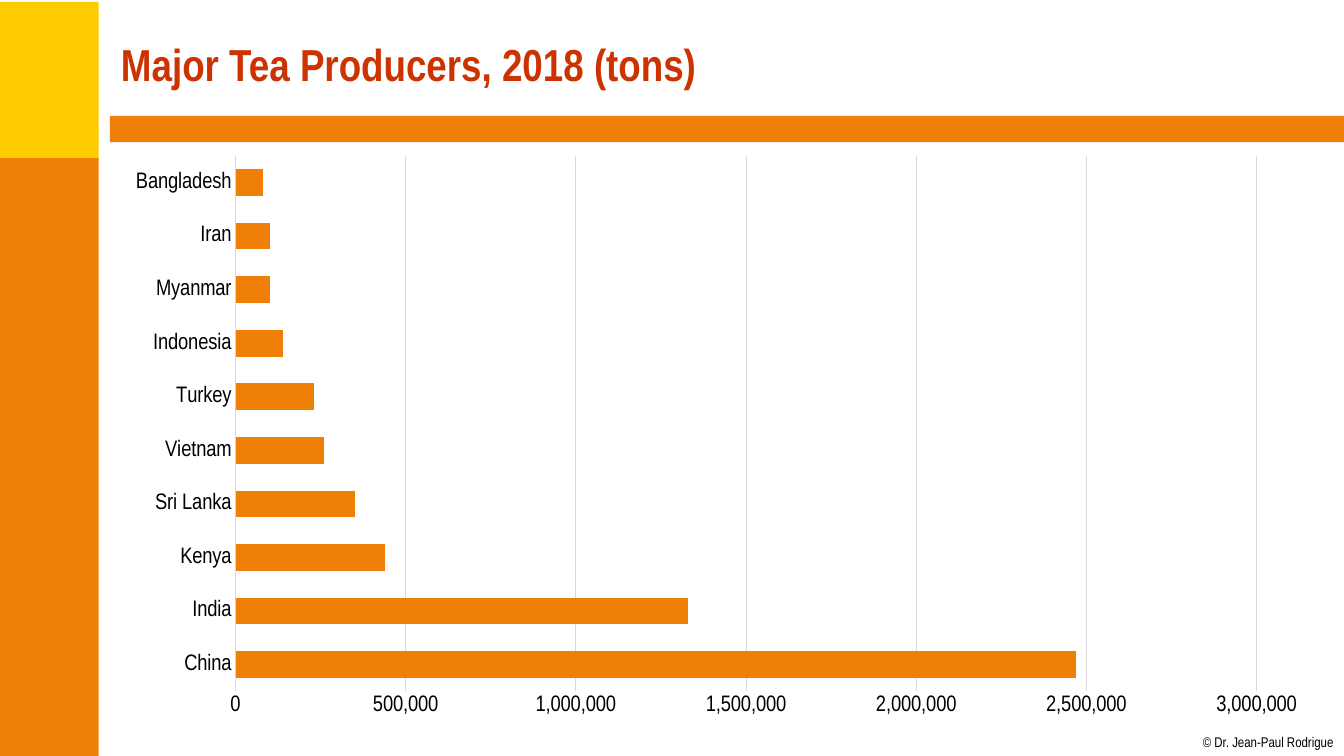
import pptx
import pptx.chart.data
import pptx.dml.color
import pptx.enum.chart
import pptx.enum.shapes
import pptx.enum.text
import pptx.oxml
import pptx.oxml.ns
import pptx.util

RGB = pptx.dml.color.RGBColor
GOLD = RGB(0xFF, 0xCC, 0x00)
ORANGE = RGB(0xF0, 0x7F, 0x09)
RED = RGB(0xCC, 0x33, 0x00)
BLACK = RGB(0, 0, 0)
GRAY = RGB(0xD9, 0xD9, 0xD9)
FACE = "Arial Narrow"
WIDE, HIGH = 13.33, 7.5
LEFT, SPAN = 1.1, 12

TEA = {
    "China": 2470000,
    "India": 1330000,
    "Kenya": 440000,
    "Sri Lanka": 350000,
    "Vietnam": 260000,
    "Turkey": 230000,
    "Indonesia": 140000,
    "Myanmar": 100000,
    "Iran": 100000,
    "Bangladesh": 80000,
}


def inches(box):
    """Turn a box of inches into lengths."""
    return [pptx.util.Inches(side) for side in box]


def style(font, size, color, bold=False):
    """Set face, size, colour and weight of a font."""
    font.name, font.size, font.bold = FACE, pptx.util.Pt(size), bold
    font.color.rgb = color


def block(slide, box, color):
    """Draw one plain colour block."""
    rect = slide.shapes.add_shape(
        pptx.enum.shapes.MSO_SHAPE.RECTANGLE, *inches(box))
    rect.shadow.inherit = False
    rect.fill.solid()
    rect.fill.fore_color.rgb = color
    rect.line.fill.background()


def frame(slide, box):
    """Draw the side band and the rule under the title."""
    left, top, wide, high = box
    band, split, rule = 1, 1.57, 1.09
    block(slide, (left - 0.02, top + 0.02, band, split), GOLD)
    block(slide, (left - 0.02, top + split, band, high - split), ORANGE)
    block(slide, (left + rule, top + 1.15, wide - rule, 0.26), ORANGE)


def credit(slide, box):
    """Write the copyright line."""
    text = slide.shapes.add_textbox(*inches(box)).text_frame
    text.margin_left = text.margin_right = 0
    text.margin_top = text.margin_bottom = 0
    text.word_wrap = False
    line = text.paragraphs[0]
    line.text = "© Dr. Jean-Paul Rodrigue"
    style(line.font, 10, BLACK)


def head(slide, box):
    """Place and fill the title."""
    title = slide.shapes.title
    title.left, title.top, title.width, title.height = inches(box)
    text = title.text_frame
    text.vertical_anchor = pptx.enum.text.MSO_ANCHOR.MIDDLE
    line = text.paragraphs[0]
    line.text = "Major Tea Producers, 2018 (tons)"
    line.alignment = pptx.enum.text.PP_ALIGN.LEFT
    style(line.font, 32, RED, True)


def layout(chart, **shares):
    """Fix the inner plot area as shares of the chart."""
    area = chart.plots[0]._element.getparent()
    for old in area.findall(pptx.oxml.ns.qn("c:layout")):
        area.remove(old)
    parts = "".join(f'<c:{key} val="{val}"/>' for key, val in shares.items())
    area.insert(0, pptx.oxml.parse_xml(
        f'<c:layout {pptx.oxml.ns.nsdecls("c")}><c:manualLayout>'
        '<c:layoutTarget val="inner"/><c:xMode val="edge"/>'
        f'<c:yMode val="edge"/>{parts}</c:manualLayout></c:layout>'))


def bars(slide, box):
    """Chart the tea output of each country."""
    data = pptx.chart.data.CategoryChartData(number_format="#,##0")
    data.categories = list(TEA)
    data.add_series("Series 1", list(TEA.values()))
    chart = slide.shapes.add_chart(
        pptx.enum.chart.XL_CHART_TYPE.BAR_CLUSTERED, *inches(box), data).chart
    chart.has_title = chart.has_legend = False
    style(chart.font, 16, BLACK)

    plot = chart.plots[0]
    plot.gap_width = 100
    plot.vary_by_categories = False
    fill = plot.series[0].format.fill
    fill.solid()
    fill.fore_color.rgb = ORANGE

    names, tons = chart.category_axis, chart.value_axis
    for axis in (names, tons):
        axis.major_tick_mark = pptx.enum.chart.XL_TICK_MARK.NONE
        axis.minor_tick_mark = pptx.enum.chart.XL_TICK_MARK.NONE
        style(axis.tick_labels.font, 16, BLACK)
    tons.minimum_scale, tons.maximum_scale = 0, 3000000
    tons.major_unit = 500000
    tons.has_major_gridlines = True
    tons.tick_labels.number_format = "#,##0"
    tons.tick_labels.number_format_is_linked = False
    tons.format.line.fill.background()
    for line in (names.format.line, tons.major_gridlines.format.line):
        line.color.rgb = GRAY
        line.width = pptx.util.Pt(0.75)
    layout(chart, x=0.103, y=0.02, w=0.844, h=0.918)


def main():
    """Build and save the slide."""
    deck = pptx.Presentation()
    deck.slide_width, deck.slide_height = inches((WIDE, HIGH))
    slide = deck.slides.add_slide(deck.slide_layouts[5])
    frame(slide, (0, 0, WIDE, HIGH))
    credit(slide, (11.93, 7.28, 1.31, 0.17))
    head(slide, (LEFT, 0.11, SPAN, 1.04))
    bars(slide, (LEFT, 1.43, SPAN, 5.79))
    deck.save("out.pptx")


if __name__ == "__main__":
    main()
